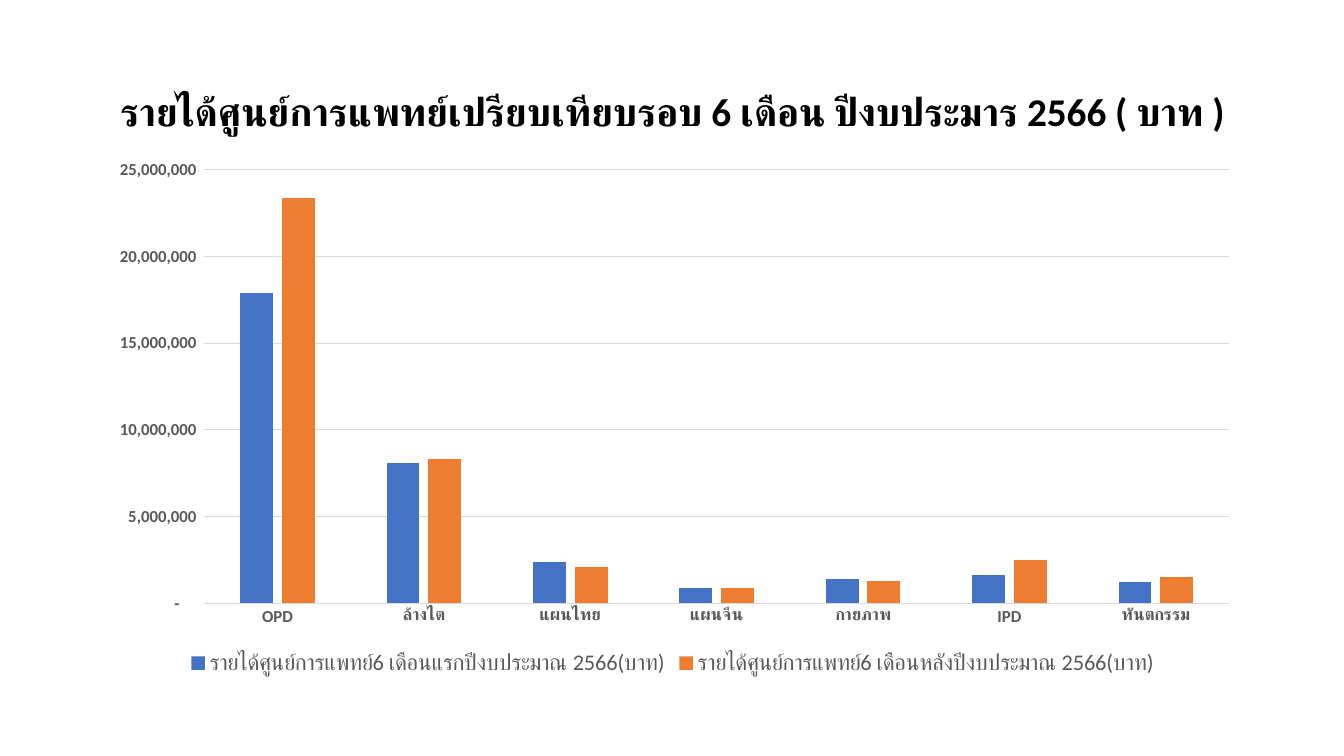
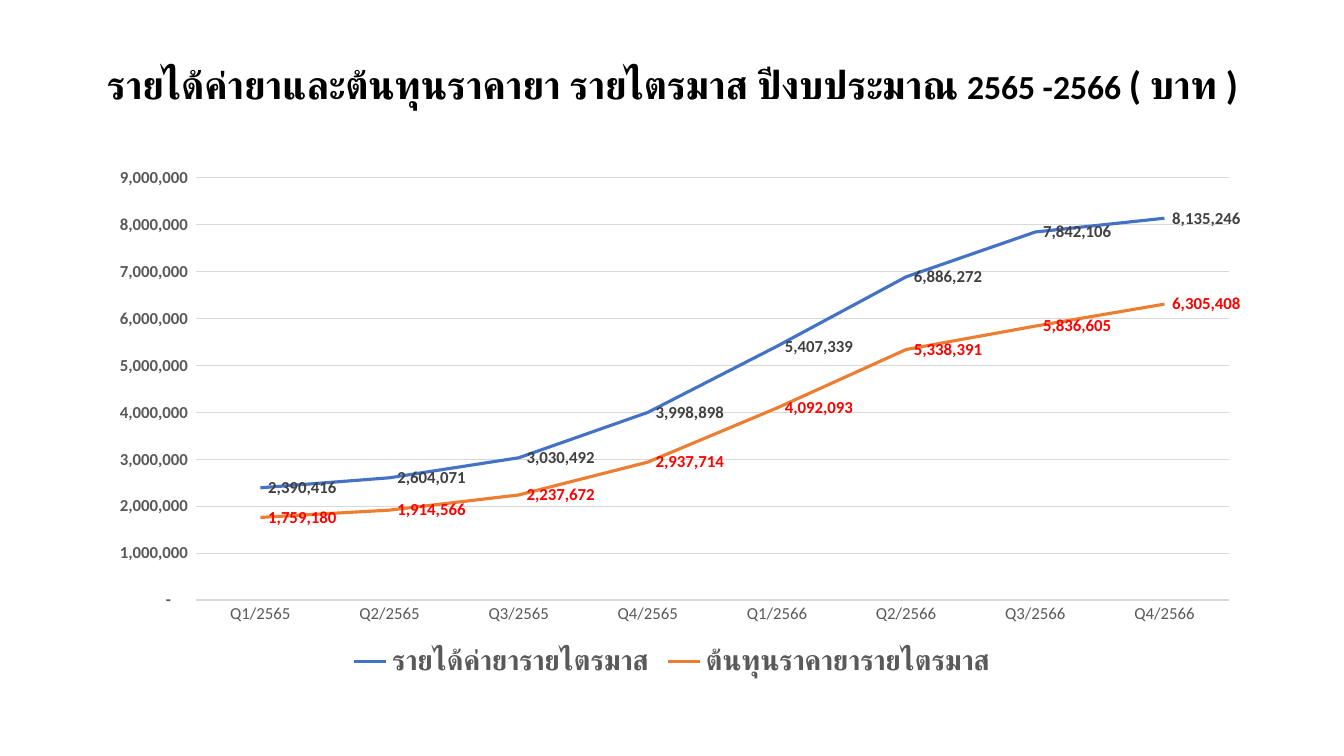
"""Build two chart slides on medical centre revenue and drug costs."""
from lxml.etree import SubElement
from pptx import Presentation
from pptx.chart.data import CategoryChartData
from pptx.dml.color import RGBColor
from pptx.enum.chart import XL_CHART_TYPE as CHART
from pptx.enum.chart import XL_LABEL_POSITION as LABEL
from pptx.enum.chart import XL_LEGEND_POSITION as LEGEND
from pptx.enum.chart import XL_TICK_MARK as TICK
from pptx.enum.text import MSO_ANCHOR, MSO_AUTO_SIZE, PP_ALIGN
from pptx.oxml.ns import qn
from pptx.util import Inches, Pt

FONT = "Calibri"
BLACK = RGBColor(0x00, 0x00, 0x00)
GRAY = RGBColor(0x59, 0x59, 0x59)
DARK = RGBColor(0x40, 0x40, 0x40)
GRID = RGBColor(0xD9, 0xD9, 0xD9)
RED = RGBColor(0xFF, 0x00, 0x00)
SERIES_COLORS = (RGBColor(0x44, 0x72, 0xC4), RGBColor(0xED, 0x7D, 0x31))
LABEL_COLORS = (DARK, RED)
NUMBER_FORMAT = r'_(* #,##0_);_(* \(#,##0\);_(* "-"??_);_(@_)'
LEFT, WIDTH, TITLE_TOP, BOTTOM = 0.92, 11.5, 0.4, 6.76

SLIDES = [
    {
        "title": [("รายได้ศูนย์การแพทย์เปรียบเทียบรอบ 6 เดือน ปีงบประมาร 2566 ( บาท )", 28)],
        "title_height": 1.45,
        "chart_top": 1.48,
        "kind": CHART.COLUMN_CLUSTERED,
        "scale": (25_000_000, 5_000_000),
        "bold_categories": True,
        "legend": {"size": 16, "bold": False},
        "categories": ["OPD", "ล้างไต", "แผนไทย", "แผนจีน", "กายภาพ", "IPD", "ทันตกรรม"],
        "series": [
            ("รายได้ศูนย์การแพทย์6 เดือนแรกปีงบประมาณ 2566(บาท)",
             [17900000, 8100000, 2400000, 900000, 1400000, 1600000, 1200000]),
            ("รายได้ศูนย์การแพทย์6 เดือนหลังปีงบประมาณ 2566(บาท)",
             [23400000, 8300000, 2100000, 900000, 1300000, 2500000, 1500000]),
        ],
    },
    {
        "title": [("รายได้ค่ายาและต้นทุนราคายา รายไตรมาส ปีงบประมาณ ", 28),
                  ("2565 -2566 ", 24), ("( บาท )", 28)],
        "title_height": 0.92,
        "chart_top": 1.56,
        "kind": CHART.LINE,
        "scale": (9_000_000, 1_000_000),
        "bold_categories": False,
        "legend": {"size": 20, "bold": True},
        "categories": [f"Q{q}/{year}" for year in (2565, 2566) for q in range(1, 5)],
        "series": [
            ("รายได้ค่ายารายไตรมาส",
             [2390416, 2604071, 3030492, 3998898, 5407339, 6886272, 7842106, 8135246]),
            ("ต้นทุนราคายารายไตรมาส",
             [1759180, 1914566, 2237672, 2937714, 4092093, 5338391, 5836605, 6305408]),
        ],
    },
]


def set_font(font, size=12, color=GRAY, bold=False):
    font.name, font.size, font.bold = FONT, Pt(size), bold
    font.color.rgb = color


def add_text(p, text, **style):
    r = p.add_run()
    r.text = text
    set_font(r.font, **style)
    SubElement(r.font._element, qn("a:cs")).set("typeface", FONT)


def add_title(s, runs, height):
    sp = s.shapes.title
    sp.left, sp.top = Inches(LEFT), Inches(TITLE_TOP)
    sp.width, sp.height = Inches(WIDTH), Inches(height)
    tf = sp.text_frame
    tf.word_wrap, tf.auto_size = True, MSO_AUTO_SIZE.NONE
    tf.vertical_anchor = MSO_ANCHOR.MIDDLE
    p = tf.paragraphs[0]
    p.alignment, p.line_spacing = PP_ALIGN.CENTER, 0.9
    for text, size in runs:
        add_text(p, text, size=size, color=BLACK, bold=True)


def format_axes(chart, scale, bold_categories):
    cat, val = chart.category_axis, chart.value_axis
    for axis, bold in ((cat, bold_categories), (val, True)):
        axis.major_tick_mark = axis.minor_tick_mark = TICK.NONE
        set_font(axis.tick_labels.font, bold=bold)
    val.minimum_scale = 0
    val.maximum_scale, val.major_unit = scale
    val.tick_labels.number_format = NUMBER_FORMAT
    val.tick_labels.number_format_is_linked = False
    val.format.line.fill.background()
    for line in (cat.format.line, val.major_gridlines.format.line):
        line.color.rgb, line.width = GRID, Pt(0.75)


def format_line(series, color, label_color):
    series.smooth = False
    series.format.line.color.rgb, series.format.line.width = color, Pt(2.25)
    labels = series.data_labels
    labels.show_value, labels.position = True, LABEL.RIGHT
    labels.number_format, labels.number_format_is_linked = NUMBER_FORMAT, False
    set_font(labels.font, color=label_color, bold=True)


def add_chart(s, item):
    data = CategoryChartData(number_format="#,##0")
    data.categories = item["categories"]
    for name, values in item["series"]:
        data.add_series(name, values)
    top = item["chart_top"]
    chart = s.shapes.add_chart(item["kind"], Inches(LEFT), Inches(top), Inches(WIDTH),
                               Inches(BOTTOM - top), data).chart
    set_font(chart.font, size=10, color=BLACK)
    chart.has_title = False
    chart.has_legend = True
    chart.legend.position, chart.legend.include_in_layout = LEGEND.BOTTOM, False
    set_font(chart.legend.font, **item["legend"])
    format_axes(chart, item["scale"], item["bold_categories"])
    plot = chart.plots[0]
    plot.vary_by_categories = False
    is_line = item["kind"] == CHART.LINE
    if not is_line:
        plot.gap_width, plot.overlap = 219, -27
    for series, color, label_color in zip(plot.series, SERIES_COLORS, LABEL_COLORS):
        if is_line:
            format_line(series, color, label_color)
        else:
            series.format.fill.solid()
            series.format.fill.fore_color.rgb = color


def main():
    prs = Presentation()
    prs.slide_width, prs.slide_height = Inches(13.33), Inches(7.5)
    for item in SLIDES:
        s = prs.slides.add_slide(prs.slide_layouts[5])
        add_title(s, item["title"], item["title_height"])
        add_chart(s, item)
    prs.save("out.pptx")


if __name__ == "__main__":
    main()
